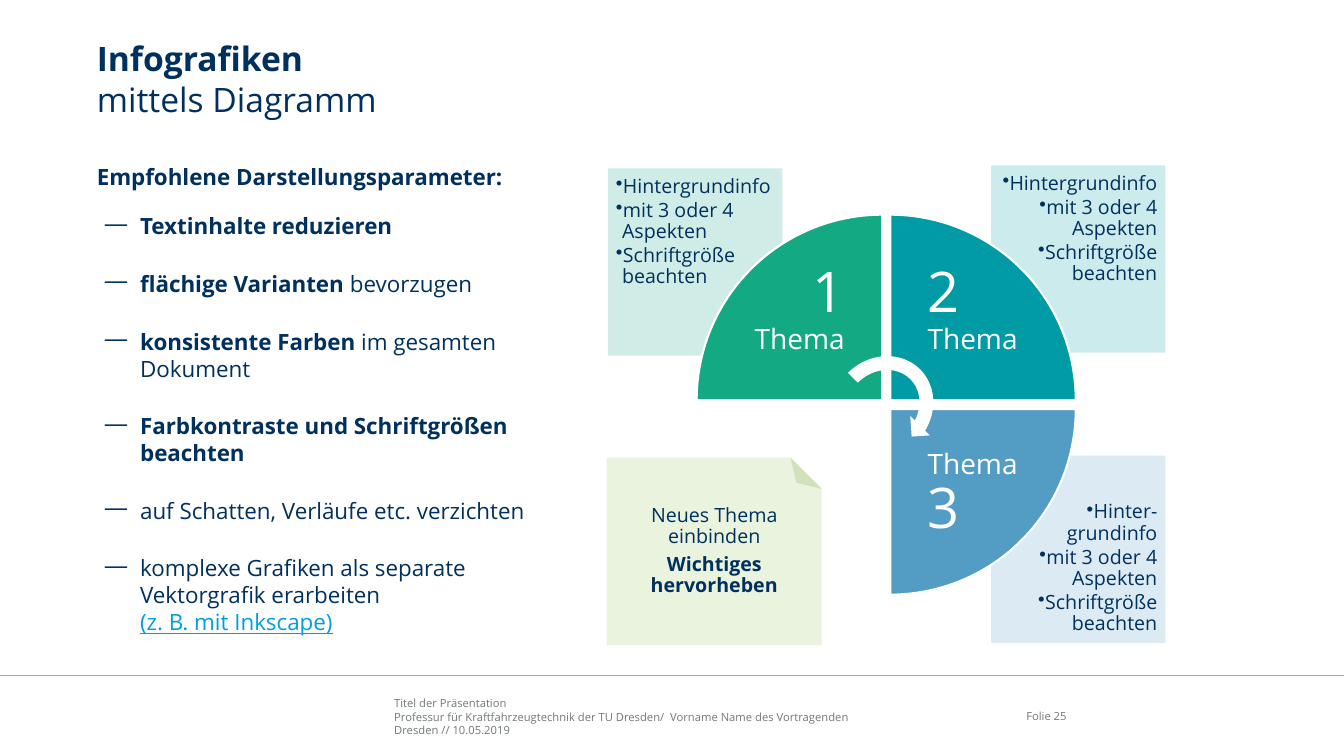
from math import cos, radians, sin

from lxml import etree
from pptx import Presentation
from pptx.dml.color import RGBColor
from pptx.enum import shapes, text
from pptx.oxml import ns
from pptx.util import Inches, Pt

NAVY = RGBColor(0x00, 0x30, 0x5E)
GREEN = RGBColor(0x13, 0xA9, 0x83)
TEAL = RGBColor(0x00, 0x9B, 0xA4)
BLUE = RGBColor(0x53, 0x9D, 0xC5)
LIME = RGBColor(0x93, 0xC3, 0x56)
FOLD = RGBColor(0xD0, 0xE1, 0xBB)
CYAN = RGBColor(0x00, 0x9E, 0xE0)
GREY = RGBColor(0x72, 0x78, 0x79)
RULE = RGBColor(0xA6, 0xA6, 0xA6)
WHITE = RGBColor(0xFF, 0xFF, 0xFF)

FONT = "Open Sans"
LEFT, RIGHT, CENTER = text.PP_ALIGN.LEFT, text.PP_ALIGN.RIGHT, text.PP_ALIGN.CENTER
TOP, MIDDLE, BOTTOM = text.MSO_ANCHOR.TOP, text.MSO_ANCHOR.MIDDLE, text.MSO_ANCHOR.BOTTOM

ASPECTS = ["mit 3 oder 4 Aspekten", "Schriftgröße beachten"]
ADVICE = [
    [("Textinhalte reduzieren", True)],
    [("flächige Varianten ", True), ("bevorzugen", False)],
    [("konsistente Farben", True), (" im gesamten Dokument", False)],
    [("Farbkontraste und Schriftgrößen beachten", True)],
    [("auf Schatten, Verläufe etc. verzichten", False)],
    [("komplexe Grafiken als separate Vektorgrafik erarbeiten\n", False),
     ("(z. B. mit Inkscape)", False)],
]


def frame(shape, anchor=TOP, insets=(0, 0, 0, 0)):
    """Prepare a shape's text frame; insets run left, top, right, bottom."""
    tf = shape.text_frame
    tf.word_wrap = True
    tf.auto_size = text.MSO_AUTO_SIZE.NONE
    tf.vertical_anchor = anchor
    tf.margin_left, tf.margin_top, tf.margin_right, tf.margin_bottom = map(Inches, insets)
    return tf


def add_run(para, words, size=None, bold=None):
    """Add a run; a closing newline becomes a line break."""
    run = para.add_run()
    run.text = words.rstrip("\n")
    if size:
        run.font.size = Pt(size)
    if bold is not None:
        run.font.bold = bold
    if words.endswith("\n"):
        para.add_line_break()
    return run


def add_para(tf, size, color, align=LEFT, spacing=1.0, before=0, after=0,
             bullet=None, indent=(0, 0)):
    para = tf.paragraphs[0]
    if para.runs:
        para = tf.add_paragraph()
    para.alignment = align
    para.line_spacing = spacing
    para.space_before, para.space_after = Pt(before), Pt(after)
    if bullet:
        props = para._p.get_or_add_pPr()
        props.set("marL", str(Inches(indent[0])))
        props.set("indent", str(Inches(indent[1])))
        etree.SubElement(props, ns.qn("a:buChar")).set("char", bullet)
    para.font.name, para.font.size = FONT, Pt(size)
    para.font.color.rgb = color
    return para


def paint(shape, color, alpha=None, line=None):
    shape.shadow.inherit = False
    shape.fill.solid()
    shape.fill.fore_color.rgb = color
    if alpha:
        tint = shape._element.spPr.find(".//" + ns.qn("a:srgbClr"))
        etree.SubElement(tint, ns.qn("a:alpha")).set("val", str(alpha * 1000))
    if line:
        shape.line.color.rgb = line
        shape.line.width = Pt(1.5)
    else:
        shape.line.fill.background()


def outline(slide, points):
    points = [(Inches(x), Inches(y)) for x, y in points]
    path = slide.shapes.build_freeform(*points[0])
    path.add_line_segments(points[1:], close=True)
    return path.convert_to_shape()


def text_box(slide, x, y, w, h, anchor=TOP):
    return frame(slide.shapes.add_textbox(Inches(x), Inches(y), Inches(w), Inches(h)), anchor)


def add_title(slide):
    title = slide.shapes.title
    title.left, title.top = Inches(0.96), Inches(0.38)
    title.width, title.height = Inches(11.57), Inches(0.75)
    para = add_para(frame(title), 24, NAVY)
    add_run(para, "Infografiken\n", bold=True)
    add_run(para, "mittels Diagramm", bold=False)


def add_advice(slide):
    tf = text_box(slide, 0.96, 1.62, 4.71, 4.65)
    add_run(add_para(tf, 16, NAVY), "Empfohlene Darstellungsparameter:", bold=True)
    for parts in ADVICE:
        para = add_para(tf, 16, NAVY, before=16, after=6, bullet="—", indent=(0.43, -0.35))
        for words, bold in parts:
            run = add_run(para, words, bold=bold)
    run.font.color.rgb = CYAN
    run.font.underline = True


def add_panel(slide, x, y, color, first, align, anchor=TOP):
    panel = slide.shapes.add_shape(shapes.MSO_SHAPE.RECTANGLE, Inches(x), Inches(y),
                                   Inches(1.73), Inches(1.86))
    paint(panel, color, alpha=20)
    tf = frame(panel, anchor, (0.08,) * 4)
    for words in [first] + ASPECTS:
        para = add_para(tf, 14, NAVY, align, 0.9, after=2.1, bullet="•", indent=(0.06, -0.06))
        add_run(para, words)


def add_wedge(slide, x, y, start, color, parts, align, insets):
    """Draw a quarter disc around (x, y), clockwise from the start angle."""
    radius, steps = 1.84, 45
    angles = [radians(start + 90 * i / steps) for i in range(steps + 1)]
    arc = [(x + radius * cos(a), y + radius * sin(a)) for a in angles]
    wedge = outline(slide, [(x, y)] + arc)
    paint(wedge, color, line=WHITE)
    para = add_para(frame(wedge, MIDDLE, insets), 20, WHITE, align, 0.9)
    for words, size in parts:
        add_run(para, words, size)


def add_note(slide):
    left, top, right, bottom = 6.02, 4.54, 8.15, 6.4
    cut = 0.31
    ear = [(right - cut, top), (right, top + cut)]
    note = outline(slide, [(left, top)] + ear + [(right, bottom), (left, bottom)])
    paint(note, LIME, alpha=20)
    paint(outline(slide, ear + [(right - 0.25, top + 0.25)]), FOLD)
    tf = frame(note, MIDDLE, (0.16,) * 4)
    for words, bold in [("Neues Thema einbinden", False), ("Wichtiges hervorheben", True)]:
        add_run(add_para(tf, 14, NAVY, CENTER, 0.9, after=4.9), words, bold=bold)


def add_arrow(slide):
    arrow = slide.shapes.add_shape(shapes.MSO_SHAPE.CIRCULAR_ARROW, Inches(8.2), Inches(3.44),
                                   Inches(1.1), Inches(1.2))
    arrow.rotation = 45
    paint(arrow, WHITE)


def add_footer(slide):
    rule = slide.shapes.add_connector(shapes.MSO_CONNECTOR.STRAIGHT, 0, Inches(6.7),
                                      Inches(13.33), Inches(6.7))
    rule.line.color.rgb, rule.line.width = RULE, Pt(1)
    etree.SubElement(rule._element.spPr, ns.qn("a:effectLst"))
    tf = text_box(slide, 3.91, 6.91, 5.67, 0.4, BOTTOM)
    for words in ["Titel der Präsentation",
                  "Professur für Kraftfahrzeugtechnik der TU Dresden/  Vorname Name des Vortragenden",
                  "Dresden // 10.05.2019"]:
        add_run(add_para(tf, 8, GREY), words)
    page = text_box(slide, 9.81, 7, 0.77, 0.2, MIDDLE)
    add_run(add_para(page, 8, GREY, RIGHT), "Folie 25")


def main():
    prs = Presentation()
    prs.slide_width, prs.slide_height = Inches(13.33), Inches(7.5)
    slide = prs.slides.add_slide(prs.slide_layouts[5])
    add_footer(slide)
    add_title(slide)
    add_advice(slide)
    add_panel(slide, 9.83, 4.52, BLUE, "Hinter-grundinfo", RIGHT, BOTTOM)
    add_panel(slide, 9.83, 1.64, TEAL, "Hintergrundinfo", RIGHT)
    add_panel(slide, 6.03, 1.67, GREEN, "Hintergrundinfo", LEFT)
    add_wedge(slide, 8.75, 3.97, 180, GREEN, [("1\n", 40), ("Thema", 20)], RIGHT,
              (0.52, 0.52, 0.37, 0.47))
    add_wedge(slide, 8.83, 3.97, 270, TEAL, [("2\n", 40), ("Thema", 20)], LEFT,
              (0.37, 0.52, 0.52, 0.47))
    add_wedge(slide, 8.83, 4.06, 0, BLUE, [("Thema ", 20), ("3", 40)], LEFT,
              (0.37, 0.39, 0.52, 0.52))
    add_note(slide)
    add_arrow(slide)
    prs.save("out.pptx")


if __name__ == "__main__":
    main()
